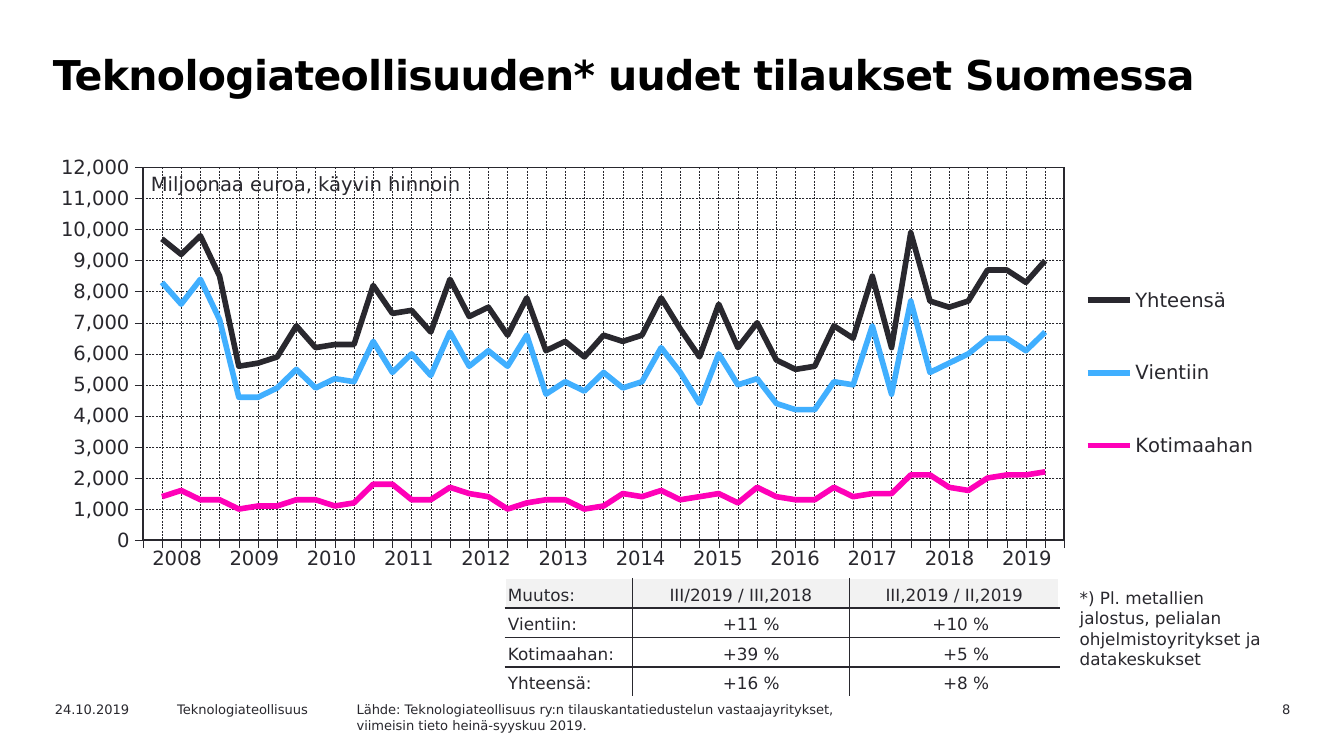
from dataclasses import dataclass, field
from typing import Any

from lxml import etree
from pptx import Presentation
from pptx.chart.data import CategoryChartData
from pptx.dml.color import RGBColor
from pptx.enum.chart import (XL_CHART_TYPE, XL_LEGEND_POSITION, XL_MARKER_STYLE,
                             XL_TICK_LABEL_POSITION, XL_TICK_MARK)
from pptx.enum.dml import MSO_LINE
from pptx.enum.text import MSO_ANCHOR, PP_ALIGN
from pptx.oxml.ns import qn
from pptx.util import Pt

PX = 4572
FACE = "DejaVu Sans"
INK = RGBColor(0x29, 0x28, 0x2E)
BLACK = RGBColor(0, 0, 0)
WHITE = RGBColor(0xFF, 0xFF, 0xFF)
PALE = RGBColor(0xF2, 0xF2, 0xF2)
BLUE = RGBColor(0x40, 0xAF, 0xFF)
PINK = RGBColor(0xFF, 0x00, 0xB8)
LEFT, MID, RIGHT = PP_ALIGN.LEFT, PP_ALIGN.CENTER, PP_ALIGN.RIGHT
BOTTOM = MSO_ANCHOR.BOTTOM
LINE = XL_CHART_TYPE.LINE
DASH = MSO_LINE.DASH
CLEAR = XL_MARKER_STYLE.NONE
OUT, NONE = XL_TICK_MARK.OUTSIDE, XL_TICK_MARK.NONE
BARE = XL_TICK_LABEL_POSITION.NONE
SIDE = XL_LEGEND_POSITION.RIGHT
PLAIN = "{2D5ABB26-0587-4C30-8999-92F81FD0307C}"


@dataclass
class Label:
    box: tuple[int, int, int, int]
    text: str
    size: float
    color: RGBColor = INK
    bold: bool = False
    para: dict[str, Any] = field(default_factory=dict)


@dataclass
class Series:
    name: str
    color: RGBColor
    hundreds: list[int]


@dataclass
class Grid:
    box: tuple[int, int, int, int]
    rows: list[list[str]]
    size: float


TITLE = Label((56, 62, 1842, 142), "Teknologiateollisuuden* uudet tilaukset Suomessa",
              22, BLACK, True, {"line_spacing": Pt(27)})
LABELS = [
    Label((1752, 1034, 188, 36), "8", 7, para={"alignment": RIGHT}),
    Label((62, 1034, 200, 36), "24.10.2019", 7),
    Label((244, 1034, 284, 36), "Teknologiateollisuus", 7),
    Label((511, 1034, 1014, 36),
          "Lähde: Teknologiateollisuus ry:n tilauskantatiedustelun vastaajayritykset,\n"
          "viimeisin tieto heinä-syyskuu 2019.", 7),
    Label((205, 246, 520, 54), "Miljoonaa euroa, käyvin hinnoin", 10.5),
    Label((1587, 865, 332, 142),
          "*) Pl. metallien jalostus, pelialan ohjelmistoyritykset ja datakeskukset", 9),
]
SERIES = [
    Series("Yhteensä", INK, [
        97, 92, 98, 85, 56, 57, 59, 69, 62, 63, 63, 82, 73, 74, 67, 84,
        72, 75, 66, 78, 61, 64, 59, 66, 64, 66, 78, 68, 59, 76, 62, 70,
        58, 55, 56, 69, 65, 85, 62, 99, 77, 75, 77, 87, 87, 83, 90]),
    Series("Vientiin", BLUE, [
        83, 76, 84, 71, 46, 46, 49, 55, 49, 52, 51, 64, 54, 60, 53, 67,
        56, 61, 56, 66, 47, 51, 48, 54, 49, 51, 62, 54, 44, 60, 50, 52,
        44, 42, 42, 51, 50, 69, 47, 77, 54, 57, 60, 65, 65, 61, 67]),
    Series("Kotimaahan", PINK, [
        14, 16, 13, 13, 10, 11, 11, 13, 13, 11, 12, 18, 18, 13, 13, 17,
        15, 14, 10, 12, 13, 13, 10, 11, 15, 14, 16, 13, 14, 15, 12, 17,
        14, 13, 13, 17, 14, 15, 15, 21, 21, 17, 16, 20, 21, 21, 22]),
]
YEARS = Grid((206, 804, 1380, 62), [[str(year) for year in range(2008, 2020)]], 10.5)
CHANGE = Grid((752, 861, 824, 176), [
    ["Muutos:", "III/2019 / III,2018", "III,2019 / II,2019"],
    ["Vientiin:", "+11 %", "+10 %"],
    ["Kotimaahan:", "+39 %", "+5 %"],
    ["Yhteensä:", "+16 %", "+8 %"],
], 9)
WIDTHS = [189, 323, 312]


def scale(box: tuple[int, ...]) -> list[int]:
    return [side * PX for side in box]


def put(item: Any, vals: dict[str, Any]) -> None:
    for key, val in vals.items():
        setattr(item, key, val)


def style(font: Any, size: float, color: RGBColor = INK, bold: bool = False) -> None:
    put(font, {"name": FACE, "size": Pt(size), "bold": bold})
    font.color.rgb = color


def node(root: Any, tag: str, **vals: Any) -> Any:
    return etree.SubElement(root, qn(tag), {key: str(val) for key, val in vals.items()})


def write(slide: Any, label: Label) -> Any:
    frame = slide.shapes.add_textbox(*scale(label.box)).text_frame
    frame.word_wrap = True
    frame.text = label.text
    for para in frame.paragraphs:
        put(para, label.para)
        for run in para.runs:
            style(run.font, label.size, label.color, label.bold)
    return frame.paragraphs[0]


def place(root: Any, spots: dict[str, float], inner: bool = False) -> Any:
    for old in root.findall(qn("c:layout")):
        root.remove(old)
    area = etree.Element(qn("c:layout"))
    form = node(area, "c:manualLayout")
    if inner:
        node(form, "c:layoutTarget", val="inner")
    for key in ("xMode", "yMode"):
        node(form, f"c:{key}", val="edge")
    for key, val in spots.items():
        node(form, f"c:{key}", val=val)
    return area


def plot(slide: Any) -> None:
    data = CategoryChartData(number_format="#,##0")
    data.categories = [str(num) for num in range(1, len(SERIES[0].hundreds) + 3)]
    for line in SERIES:
        data.add_series(line.name, [None, *(num * 100 for num in line.hundreds), None])
    chart = slide.shapes.add_chart(LINE, *scale((62, 222, 1836, 666)), data).chart
    put(chart, {"has_title": False, "has_legend": True})
    style(chart.font, 10.5)
    chart.plots[0].vary_by_categories = False
    for part, line in zip(chart.plots[0].series, SERIES):
        part.smooth = False
        part.marker.style = CLEAR
        part.format.line.color.rgb = line.color
        part.format.line.width = Pt(3)
    cats, vals = chart.category_axis, chart.value_axis
    for axis in (cats, vals):
        put(axis, {"has_major_gridlines": True, "major_tick_mark": OUT, "minor_tick_mark": NONE})
        for form, width in ((axis.format, 0.22), (axis.major_gridlines.format, 0.25)):
            form.line.color.rgb = INK
            form.line.width = Pt(width)
        axis.major_gridlines.format.line.dash_style = DASH
    cats.tick_label_position = BARE
    put(vals, {"minimum_scale": 0, "maximum_scale": 12000, "major_unit": 1000})
    put(vals.tick_labels, {"number_format": "#,##0", "number_format_is_linked": False})
    style(vals.tick_labels.font, 10.5)
    root = chart.plots[0]._element.getparent()
    scope = root.find(qn("c:valAx"))
    cross = scope.find(qn("c:crossBetween"))
    if cross is None:
        cross = etree.Element(qn("c:crossBetween"))
        scope.find(qn("c:crosses")).addnext(cross)
    cross.set("val", "midCat")
    root.insert(0, place(root, {"x": 0.08, "y": 0.04, "w": 0.75, "h": 0.83}, True))
    spots = {"x": 0.082, "y": 0.041, "w": 0.747, "h": 0.833}
    root.insert(0, place(root, spots, True))
    shape = node(root, "c:spPr")
    node(shape, "a:noFill")
    edge = node(shape, "a:ln", w=Pt(1))
    node(node(edge, "a:solidFill"), "a:srgbClr", val=INK)
    key = chart.legend
    put(key, {"position": SIDE, "include_in_layout": False})
    style(key.font, 10.5)
    key._element.find(qn("c:legendPos")).addnext(
        place(key._element, {"x": 0.84, "y": 0.2, "w": 0.15, "h": 0.6}))


def table(slide: Any, grid: Grid) -> Any:
    shape = slide.shapes.add_table(len(grid.rows), len(grid.rows[0]), *scale(grid.box))
    body = shape.table
    put(body, {"first_row": False, "horz_banding": False})
    body._tbl.tblPr.find(qn("a:tableStyleId")).text = PLAIN
    for row, texts in enumerate(grid.rows):
        for col, text in enumerate(texts):
            cell = body.cell(row, col)
            cell.text = text
            cell.fill.background()
            para = cell.text_frame.paragraphs[0]
            para.alignment = MID
            style(para.runs[0].font, grid.size)
    return body


def rule(cell: Any, inner: dict[str, bool]) -> None:
    root = cell._tc.get_or_add_tcPr()
    for spot, (side, dark) in enumerate(inner.items()):
        edge = etree.Element(qn(f"a:ln{side}"), {"w": str(Pt(1))})
        node(node(edge, "a:solidFill"), "a:srgbClr", val=INK if dark else WHITE)
        root.insert(spot, edge)


def compare(slide: Any) -> None:
    body = table(slide, CHANGE)
    for col, width in zip(body.columns, WIDTHS):
        col.width = width * PX
    last, end = len(CHANGE.rows) - 1, len(WIDTHS) - 1
    for row in range(last + 1):
        for col in range(end + 1):
            cell = body.cell(row, col)
            value = row > 0 and col > 0
            put(cell, {"vertical_anchor": BOTTOM, "margin_left": 4 * PX, "margin_top": 4 * PX,
                       "margin_right": (104 if value else 4) * PX, "margin_bottom": 4 * PX})
            cell.text_frame.paragraphs[0].alignment = RIGHT if value else MID if col else LEFT
            if row == 0:
                cell.fill.solid()
                cell.fill.fore_color.rgb = PALE
            rule(cell, {"L": col > 0, "R": col < end, "T": row > 0, "B": row < last})


def main() -> None:
    deck = Presentation()
    put(deck, {"slide_width": 2000 * PX, "slide_height": 1125 * PX})
    slide = deck.slides.add_slide(deck.slide_layouts[6])
    head = write(slide, TITLE)
    head._p.get_or_add_pPr().set("marL", str(3 * PX))
    head.runs[0].font._element.set("spc", "-35")
    plot(slide)
    table(slide, YEARS)
    compare(slide)
    for label in LABELS:
        write(slide, label)
    deck.save("out.pptx")


if __name__ == "__main__":
    main()
